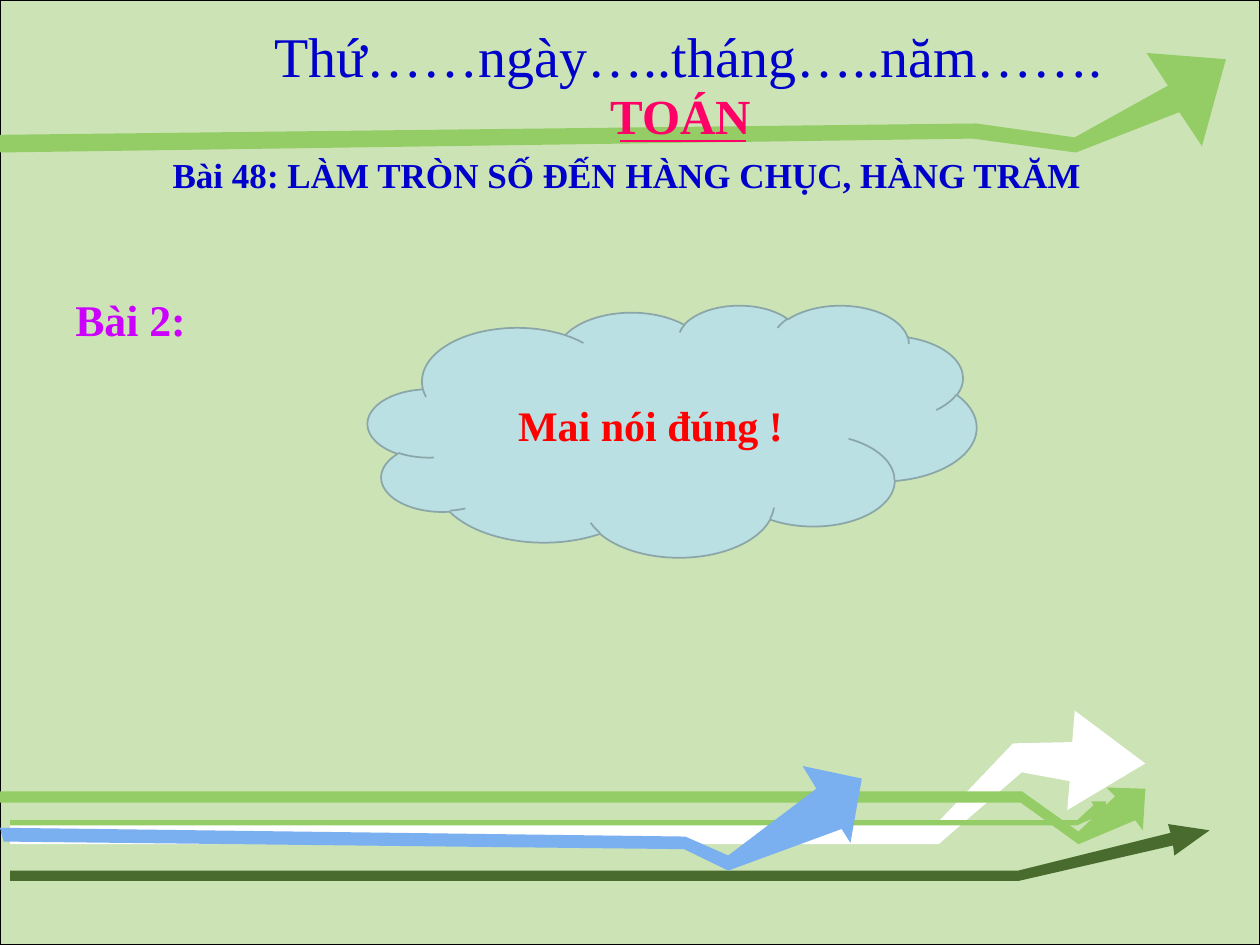
"""Build a maths lesson slide with ribbon arrows, headings and an answer cloud."""
import pptx
import pptx.util
import pptx.dml.color
import pptx.enum.shapes
import pptx.enum.text
import lxml.etree

THEME = {
    "font": "Times New Roman",
    "meadow": "CBE3B5", "black": "000000", "white": "FFFFFF",
    "leaf": "94CC66", "forest": "496B2E", "sky": "7AAFF0",
    "cloud": "BBE0E3", "cloud_edge": "8AA6A8",
    "blue": "0000CC", "pink": "FF0066", "violet": "CC00FF", "red": "FF0000",
    "date": 32, "subject": 28, "lesson": 20, "exercise": 25, "answer": 24,
}
UNIT_CM = 2.54
PAGE_SIZE = (10, 7.5)

RIBBONS = [
    ("white", [(0.08, 6.53), (7.44, 6.53), (8.04, 5.9), (8.51, 5.89), (8.53, 5.64), (9.09, 6.06),
               (8.47, 6.43), (8.49, 6.2), (8.11, 6.13), (7.45, 6.7), (0.08, 6.7)]),
    ("leaf", [(0.08, 6.51), (8.55, 6.51), (8.68, 6.39), (8.66, 6.36), (8.78, 6.36), (8.77, 6.5),
              (8.74, 6.46), (8.75, 6.46), (8.55, 6.55), (0.08, 6.55)]),
    ("leaf", [(0, 6.28), (8.11, 6.28), (8.56, 6.6), (8.85, 6.32), (8.78, 6.25), (9.09, 6.26),
              (9.07, 6.59), (9.01, 6.51), (8.56, 6.7), (8.1, 6.37), (0, 6.37)]),
    ("forest", [(0.08, 6.91), (8.08, 6.91), (9.29, 6.61), (9.27, 6.54), (9.6, 6.59), (9.32, 6.79),
                (9.31, 6.71), (8.09, 6.99), (0.08, 6.99)]),
    ("sky", [(0.03, 6.68), (5.43, 6.74), (5.78, 6.91), (6.68, 6.58), (6.75, 6.69), (6.84, 6.18),
             (6.37, 6.08), (6.48, 6.26), (5.78, 6.79), (5.44, 6.64), (0, 6.57)]),
    ("leaf", [(0, 1.21), (7.72, 1.1), (8.54, 1.21), (9.36, 0.89), (9.54, 1.16), (9.73, 0.47),
              (9.1, 0.42), (9.27, 0.68), (8.53, 1.09), (7.75, 0.98), (0, 1.07)]),
]
EXERCISE = ("Bài 2:", (0.5, 2.17, 6.5, 0.63))
ANSWER = ("Mai nói đúng !", (2.92, 2.42, 4.83, 2))
DATE = ("Thứ……ngày…..tháng…..năm…….", (2.08, 0.12, 6.84, 0.64))
SUBJECT = ("TOÁN", (4.75, 0.63, 1.33, 0.57))
SUBJECT_RULE = (4.92, 1.12, 5.92, 1.12)
LESSON = ("Bài 48: LÀM TRÒN SỐ ĐẾN HÀNG CHỤC, HÀNG TRĂM ", (0.25, 1.14, 9.52, 0.49))

ALIGN = pptx.enum.text.PP_ALIGN
SHAPE = pptx.enum.shapes.MSO_SHAPE


def length(value):
    return pptx.util.Cm(value * UNIT_CM)


def lengths(values):
    return [length(value) for value in values]


def colour(name):
    return pptx.dml.color.RGBColor.from_string(THEME[name])


def paint(shape, fill, edge=None, width=1):
    shape.shadow.inherit = False
    shape.fill.solid()
    shape.fill.fore_color.rgb = colour(fill)
    if edge:
        shape.line.color.rgb = colour(edge)
        shape.line.width = pptx.util.Pt(width)
    else:
        shape.line.fill.background()


def write(box, text, size, ink, align=ALIGN.LEFT, bold=True):
    para = box.text_frame.paragraphs[0]
    para.text = text
    para.alignment = align
    para.font.name = THEME["font"]
    para.font.size = pptx.util.Pt(THEME[size])
    para.font.bold = bold
    para.font.color.rgb = colour(ink)
    return para


def add_text(page, content, size, ink, align=ALIGN.LEFT, bold=True, wrap=True):
    text, place = content
    box = page.shapes.add_textbox(*lengths(place))
    box.text_frame.word_wrap = wrap
    return box, write(box, text, size, ink, align, bold)


def add_ribbon(page, fill, points):
    corners = [lengths(point) for point in points]
    builder = page.shapes.build_freeform(*corners[0])
    builder.add_line_segments(corners[1:], close=True)
    paint(builder.convert_to_shape(), fill)


def add_rule(page, ends, ink):
    rule = page.shapes.add_connector(pptx.enum.shapes.MSO_CONNECTOR.STRAIGHT, *lengths(ends))
    rule.line.color.rgb = colour(ink)
    rule.line.width = pptx.util.Pt(1)
    lxml.etree.SubElement(rule._element.spPr, pptx.oxml.ns.qn("a:effectLst"))


def main():
    deck = pptx.Presentation()
    deck.slide_width, deck.slide_height = lengths(PAGE_SIZE)
    page = deck.slides.add_slide(deck.slide_layouts[6])

    backdrop = page.shapes.add_shape(SHAPE.RECTANGLE, 0, 0, *lengths(PAGE_SIZE))
    paint(backdrop, "meadow", "black", 0.75)
    for fill, points in RIBBONS:
        add_ribbon(page, fill, points)

    box, para = add_text(page, EXERCISE, "exercise", "violet", ALIGN.JUSTIFY)
    para.line_spacing = 1.25
    indent = length(0.67)
    properties = para._p.get_or_add_pPr()
    properties.set("marL", str(indent))
    properties.set("indent", str(-indent))

    text, place = ANSWER
    cloud = page.shapes.add_shape(SHAPE.CLOUD, *lengths(place))
    paint(cloud, "cloud", "cloud_edge")
    cloud.text_frame.vertical_anchor = pptx.enum.text.MSO_ANCHOR.MIDDLE
    write(cloud, text, "answer", "red", ALIGN.CENTER)

    add_text(page, DATE, "date", "blue", bold=False, wrap=False)
    add_text(page, SUBJECT, "subject", "pink", wrap=False)
    add_rule(page, SUBJECT_RULE, "pink")

    box, para = add_text(page, LESSON, "lesson", "blue", ALIGN.CENTER)
    frame = box.text_frame
    frame.margin_left = frame.margin_right = length(0.16)
    frame.margin_top = frame.margin_bottom = length(0.08)

    deck.save("out.pptx")


if __name__ == "__main__":
    main()
